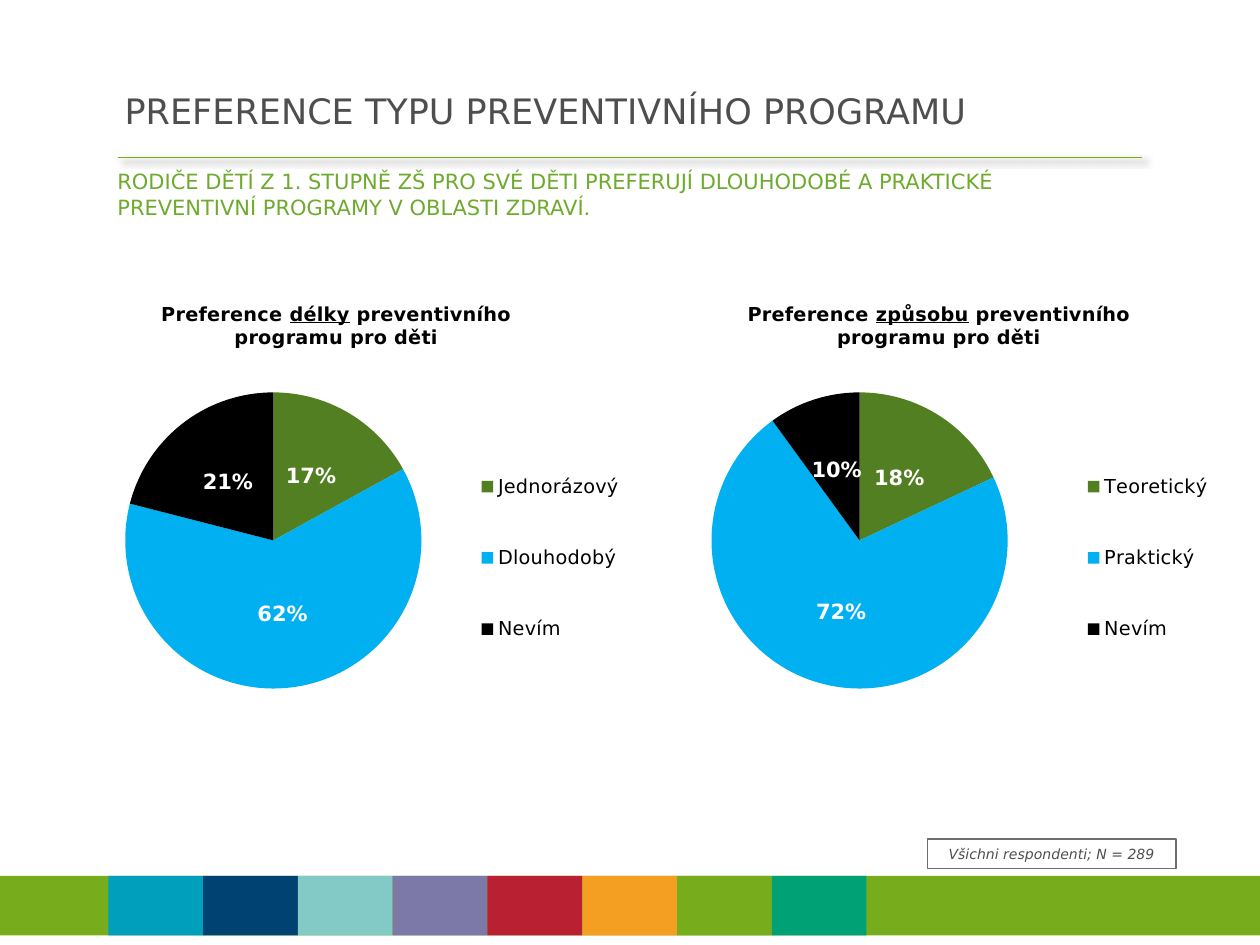
from lxml.etree import SubElement
from pptx import Presentation
from pptx.chart.data import CategoryChartData
from pptx.dml.color import RGBColor
from pptx.enum.chart import XL_CHART_TYPE, XL_LABEL_POSITION, XL_LEGEND_POSITION
from pptx.enum.shapes import MSO_CONNECTOR, MSO_SHAPE
from pptx.enum.text import MSO_ANCHOR, PP_ALIGN
from pptx.oxml import parse_xml
from pptx.oxml.ns import nsdecls, qn
from pptx.util import Pt

FONT = "DejaVu Sans"
COLORS = {
    "green": "77AD1C", "teal": "009FBB", "navy": "004272", "mint": "83C9C6",
    "violet": "7C78A8", "red": "B92032", "orange": "F49F22", "emerald": "00A275",
    "heading": "4E4E4E", "subtitle": "6EAA2E", "border": "6E6E6E",
    "pie_green": "527F22", "pie_blue": "00B0F0", "black": "000000", "white": "FFFFFF",
}
STRIPES = ["teal", "navy", "mint", "violet", "red", "orange", "green", "emerald"]
SLICES = ["pie_green", "pie_blue", "black"]


def rgb(name):
    return RGBColor.from_string(COLORS[name])


def format_font(font, size, color="black", bold=False, italic=False, underline=False):
    font.name = FONT
    font.size = Pt(size)
    font.color.rgb = rgb(color)
    font.bold, font.italic, font.underline = bold, italic, underline


def add_text(p, text, align=None, **fmt):
    if align is not None:
        p.alignment = align
    for i, line in enumerate(text.split("\n")):
        if i:
            p.add_line_break()
        r = p.add_run()
        r.text = line
        format_font(r.font, **fmt)


def add_rect(s, x, y, w, h, fill=None, line=None):
    sp = s.shapes.add_shape(MSO_SHAPE.RECTANGLE, Pt(x), Pt(y), Pt(w), Pt(h))
    sp.shadow.inherit = False
    if fill:
        sp.fill.solid()
        sp.fill.fore_color.rgb = rgb(fill)
    else:
        sp.fill.background()
    if line:
        sp.line.color.rgb = rgb(line)
        sp.line.width = Pt(0.75)
    else:
        sp.line.fill.background()
    return sp


def add_title(s, text):
    sp = s.shapes.title
    sp.left, sp.top, sp.width, sp.height = Pt(64), Pt(44.5), Pt(639), Pt(37)
    tf = sp.text_frame
    tf.word_wrap = True
    tf.vertical_anchor = MSO_ANCHOR.MIDDLE
    add_text(tf.paragraphs[0], text, PP_ALIGN.LEFT, size=20, color="heading")
    tf.paragraphs[0].space_after = Pt(3)


def add_subtitle(s, text):
    tf = s.shapes.add_textbox(Pt(60), Pt(93), Pt(635), Pt(40)).text_frame
    tf.word_wrap = True
    add_text(tf.paragraphs[0], text, size=12, color="subtitle")


def add_rule(s):
    c = s.shapes.add_connector(MSO_CONNECTOR.STRAIGHT, Pt(67.5), Pt(90), Pt(652.5), Pt(90))
    c.line.color.rgb = rgb("green")
    c.line.width = Pt(0.75)
    c._element.spPr.append(parse_xml(
        f'<a:effectLst {nsdecls("a")}><a:outerShdw blurRad="{Pt(4)}" dist="{Pt(3)}" '
        'dir="2700000"><a:srgbClr val="000000"><a:alpha val="40000"/></a:srgbClr>'
        '</a:outerShdw></a:effectLst>'))


def add_footer_band(s):
    add_rect(s, 0, 500.5, 720, 34, "green")
    for i, color in enumerate(STRIPES):
        add_rect(s, 62 + 54.15 * i, 500.5, 54.15, 34, color)


def add_sample_note(s, text):
    tf = add_rect(s, 530, 479.5, 142, 17, line="border").text_frame
    tf.word_wrap = True
    tf.vertical_anchor = MSO_ANCHOR.MIDDLE
    add_text(tf.paragraphs[0], text, PP_ALIGN.CENTER, size=8, color="heading", italic=True)


def set_layout(element, before, inner=False, **place):
    """Place a chart part by fractions of the chart area."""
    for old in element.findall(qn("c:layout")):
        element.remove(old)
    layout = parse_xml(f'<c:layout {nsdecls("c")}/>')
    manual = SubElement(layout, qn("c:manualLayout"))
    if inner:
        SubElement(manual, qn("c:layoutTarget")).set("val", "inner")
    for axis in ("x", "y"):
        SubElement(manual, qn(f"c:{axis}Mode")).set("val", "edge")
    for key, value in place.items():
        SubElement(manual, qn(f"c:{key}")).set("val", str(value))
    element.find(qn(before)).addprevious(layout)


def add_pie(s, x, topic, categories, values, legend_x):
    data = CategoryChartData(number_format="0%")
    data.categories = categories
    data.add_series("Series 1", values)
    chart = s.shapes.add_chart(XL_CHART_TYPE.PIE, Pt(x), Pt(162), Pt(323), Pt(249), data).chart
    format_font(chart.font, 18)

    chart.has_title = True
    p = chart.chart_title.text_frame.paragraphs[0]
    add_text(p, "Preference ", size=11, bold=True)
    add_text(p, topic, size=11, bold=True, underline=True)
    add_text(p, " preventivního programu pro děti", size=11, bold=True)
    chart.chart_title.include_in_layout = False
    set_layout(chart.chart_title._element, "c:overlay", x=0.13, y=0.03)

    chart.has_legend = True
    legend = chart.legend
    legend.position = XL_LEGEND_POSITION.RIGHT
    legend.include_in_layout = False
    format_font(legend.font, 11)
    set_layout(legend._element, "c:overlay", x=legend_x, y=0.33, w=0.31, h=0.6)

    plot = chart.plots[0]
    plot.vary_by_categories = True
    set_layout(chart._chartSpace.chart.plotArea, "c:pieChart", inner=True,
               x=0.07, y=0.25, w=0.53, h=0.68)
    series = plot.series[0]
    for i, color in enumerate(SLICES):
        fill = series.points[i].format.fill
        fill.solid()
        fill.fore_color.rgb = rgb(color)
    labels = series.data_labels
    labels.show_value = True
    labels.number_format = "0%"
    labels.number_format_is_linked = False
    labels.position = XL_LABEL_POSITION.CENTER
    format_font(labels.font, 12, "white", bold=True)


def main():
    prs = Presentation()
    prs.slide_width, prs.slide_height = Pt(720), Pt(540)
    s = prs.slides.add_slide(prs.slide_layouts[5])
    add_rule(s)
    add_footer_band(s)
    add_title(s, "PREFERENCE TYPU PREVENTIVNÍHO PROGRAMU")
    add_subtitle(s, "RODIČE DĚTÍ Z 1. STUPNĚ ZŠ PRO SVÉ DĚTI PREFERUJÍ DLOUHODOBÉ A PRAKTICKÉ \n"
                    "PREVENTIVNÍ PROGRAMY V OBLASTI ZDRAVÍ.")
    add_pie(s, 48, "délky", ["Jednorázový", "Dlouhodobý", "Nevím"], [0.17, 0.62, 0.21], 0.67)
    add_sample_note(s, "Všichni respondenti; N = 289")
    add_pie(s, 383, "způsobu", ["Teoretický", "Praktický", "Nevím"], [0.18, 0.72, 0.1], 0.69)
    prs.save("out.pptx")


if __name__ == "__main__":
    main()
